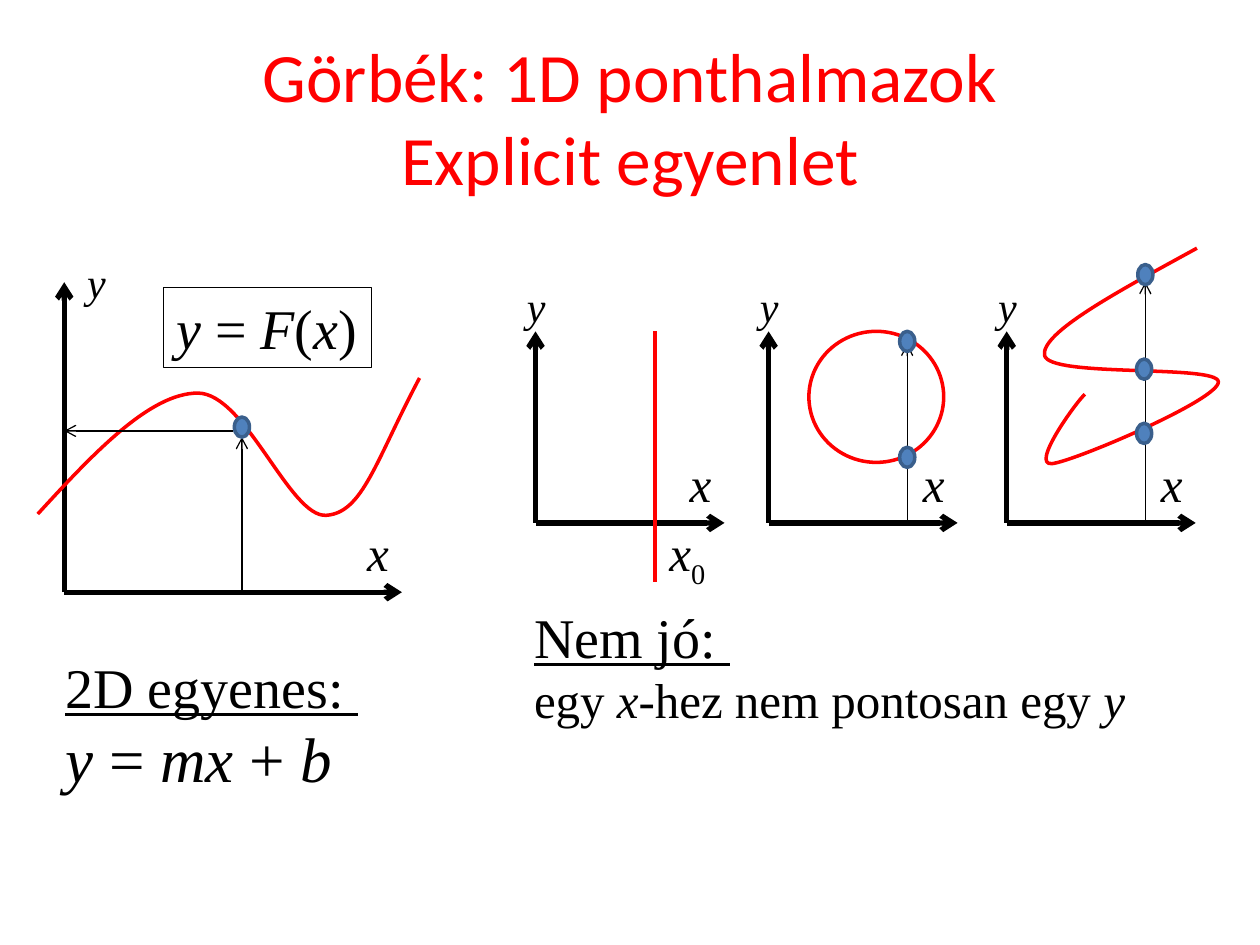
import dataclasses

import lxml.etree
import pptx
import pptx.dml.color
import pptx.enum.shapes
import pptx.enum.text
import pptx.oxml.ns
import pptx.util

Inches = pptx.util.Inches
Pt = pptx.util.Pt
rgb = pptx.dml.color.RGBColor.from_string
qn = pptx.oxml.ns.qn
MSO_SHAPE = pptx.enum.shapes.MSO_SHAPE


@dataclasses.dataclass(frozen=True)
class Theme:
    title_font: str = "Calibri"
    body_font: str = "Times New Roman"
    ink: str = "000000"
    red: str = "FF0000"
    dot_fill: str = "4F81BD"
    dot_edge: str = "3A5F8C"
    title: float = 39.6
    formula: float = 36
    heading: float = 32
    note: float = 28
    y_label: float = 24
    axis: float = 3
    curve: float = 2
    thin: float = 0.75


@dataclasses.dataclass(frozen=True)
class Box:
    left: float
    top: float
    width: float
    height: float

    @property
    def bottom(self):
        return self.top + self.height

    @property
    def right(self):
        return self.left + self.width

    def inches(self):
        return [Inches(v) for v in (self.left, self.top, self.width, self.height)]

    def point(self, x, y):
        return Inches(self.left + x), Inches(self.bottom - y)


THEME = Theme()


def set_line(shape, color, width):
    shape.line.color.rgb = rgb(color)
    shape.line.width = Pt(width)


def add_line(slide, start, end, color=THEME.ink, width=THEME.thin, arrow=True):
    line = slide.shapes.add_connector(
        pptx.enum.shapes.MSO_CONNECTOR.STRAIGHT, *start, *end)
    set_line(line, color, width)
    properties = line._element.spPr
    if arrow:
        lxml.etree.SubElement(line.line._get_or_add_ln(), qn("a:tailEnd"), type="arrow")
    lxml.etree.SubElement(properties, qn("a:effectLst"))


def add_curve(slide, box, points):
    start, *controls = [box.point(*p) for p in points]
    builder = slide.shapes.build_freeform(*start)
    builder.add_line_segments(controls, close=False)
    curve = builder.convert_to_shape()
    curve.shadow.inherit = False
    curve.fill.background()
    set_line(curve, THEME.red, THEME.curve)
    segments = list(curve._element.iter(qn("a:lnTo")))
    for i in range(0, len(segments), 3):
        bezier = lxml.etree.Element(qn("a:cubicBezTo"))
        segments[i].addprevious(bezier)
        for segment in segments[i:i + 3]:
            bezier.append(segment[0])
            segment.getparent().remove(segment)


def add_oval(slide, bounds, fill, edge):
    oval = slide.shapes.add_shape(MSO_SHAPE.OVAL, *bounds)
    oval.shadow.inherit = False
    if fill:
        oval.fill.solid()
        oval.fill.fore_color.rgb = rgb(fill)
    else:
        oval.fill.background()
    set_line(oval, edge, THEME.curve)


def add_dots(slide, box, centers):
    width, height = Inches(0.12), Inches(0.16)
    for center in centers:
        x, y = box.point(*center)
        add_oval(slide, (x - width // 2, y - height // 2, width, height),
                 THEME.dot_fill, THEME.dot_edge)


def write_line(paragraph, parts, size, underline=False):
    paragraph.font.name = THEME.body_font
    paragraph.font.size = Pt(size)
    paragraph.font.color.rgb = rgb(THEME.ink)
    paragraph.font.underline = underline
    for text, italic in parts:
        run = paragraph.add_run()
        run.text = text
        run.font.italic = italic


def add_text(slide, box, parts, size, centered=True):
    text_box = slide.shapes.add_textbox(*box.inches())
    text_box.text_frame.word_wrap = False
    line = text_box.text_frame.paragraphs[0]
    if centered:
        line.alignment = pptx.enum.text.PP_ALIGN.CENTER
    write_line(line, parts, size)
    return text_box


def add_title(slide, box):
    title = slide.shapes.title
    title.left, title.top, title.width, title.height = box.inches()
    frame = title.text_frame
    frame.text = "Görbék: 1D ponthalmazok\vExplicit egyenlet"
    frame.auto_size = pptx.enum.text.MSO_AUTO_SIZE.NONE
    frame.vertical_anchor = pptx.enum.text.MSO_ANCHOR.MIDDLE
    heading = frame.paragraphs[0]
    heading.alignment = pptx.enum.text.PP_ALIGN.CENTER
    heading.font.name = THEME.title_font
    heading.font.size = Pt(THEME.title)
    heading.font.color.rgb = rgb(THEME.red)


def add_axes(slide, box, y_shift=(-0.17, -0.45)):
    origin = box.point(0, 0)
    for tip in (box.point(box.width, 0), box.point(0, box.height)):
        add_line(slide, origin, tip, width=THEME.axis)
    add_text(slide, Box(box.right - 0.38, box.bottom - 0.6, 0.38, 0.57),
             [("x", True)], THEME.note)
    add_text(slide, Box(box.left + y_shift[0], box.top + y_shift[1], 0.35, 0.5),
             [("y", True)], THEME.y_label)


def add_function_plot(slide, box):
    add_axes(slide, box, y_shift=(0.08, -0.25))
    formula = add_text(
        slide, Box(box.left + 0.79, box.top + 0.04, 1.65, 0.64),
        [("y ", True), ("= ", False), ("F", True), ("(", False), ("x", True), (")", False)],
        THEME.heading, centered=False)
    set_line(formula, THEME.ink, THEME.thin)
    add_curve(slide, box, [(-0.21, 0.62), (0.23, 1.1), (0.68, 1.58), (1.06, 1.58),
                           (1.44, 1.58), (1.79, 0.59), (2.08, 0.61),
                           (2.37, 0.63), (2.47, 1.04), (2.82, 1.7)])
    add_line(slide, box.point(1.41, 0), box.point(1.41, 1.23))
    add_dots(slide, box, [(1.41, 1.31)])
    add_line(slide, box.point(1.34, 1.28), box.point(0, 1.28))


def add_vertical_plot(slide, box):
    add_axes(slide, box)
    add_line(slide, box.point(0.95, 1.52), box.point(0.95, -0.47),
             THEME.red, 2.25, arrow=False)
    label = add_text(slide, Box(box.left + 0.95, box.bottom - 0.05, 0.51, 0.57),
                     [("x", True), ("0", False)], THEME.note)
    subscript = label.text_frame.paragraphs[0].runs[1]
    subscript.font._element.set("baseline", "-25000")


def add_circle_plot(slide, box):
    add_axes(slide, box)
    circle = Box(box.left + 0.32, box.top, 1.07, 1.04)
    add_oval(slide, circle.inches(), None, THEME.red)
    add_line(slide, box.point(1.1, 0), box.point(1.1, 1.42))
    add_dots(slide, box, [(1.1, 0.52), (1.1, 1.44)])


def add_winding_plot(slide, box):
    add_axes(slide, box)
    add_line(slide, box.point(1.1, 0), box.point(1.1, 1.91))
    add_curve(slide, box, [(0.62, 1.02), (0.56, 0.97), (0.18, 0.45), (0.36, 0.47),
                           (0.54, 0.49), (1.69, 0.98), (1.68, 1.12),
                           (1.67, 1.26), (0.33, 1.15), (0.3, 1.33),
                           (0.27, 1.51), (0.89, 1.84), (1.51, 2.18)])
    add_dots(slide, box, [(1.1, 1.97), (1.09, 1.22), (1.09, 0.71)])


def add_note(slide, box, heading, parts, size):
    note = slide.shapes.add_textbox(*box.inches())
    frame = note.text_frame
    frame.word_wrap = True
    write_line(frame.paragraphs[0], [(heading, False)], THEME.heading, underline=True)
    write_line(frame.add_paragraph(), parts, size)


def main():
    deck = pptx.Presentation()
    deck.slide_width, deck.slide_height = Inches(10), Inches(7.5)
    slide = deck.slides.add_slide(deck.slide_layouts[5])
    add_title(slide, Box(0.5, 0.3, 9, 1.25))
    add_function_plot(slide, Box(0.51, 2.24, 2.68, 2.46))
    plots = [(4.25, add_vertical_plot), (6.1, add_circle_plot), (7.99, add_winding_plot)]
    for left, add_plot in plots:
        add_plot(slide, Box(left, 2.63, 1.5, 1.52))
    add_note(slide, Box(0.42, 5.13, 2.91, 1.25), "2D egyenes: ",
             [("y ", True), ("= ", False), ("mx", True), (" + ", False), ("b", True)],
             THEME.formula)
    add_note(slide, Box(4.14, 4.73, 4.94, 1.11), "Nem jó: ",
             [("egy ", False), ("x", True), ("-hez nem pontosan egy ", False), ("y", True)],
             THEME.note)
    deck.save("out.pptx")


if __name__ == "__main__":
    main()
